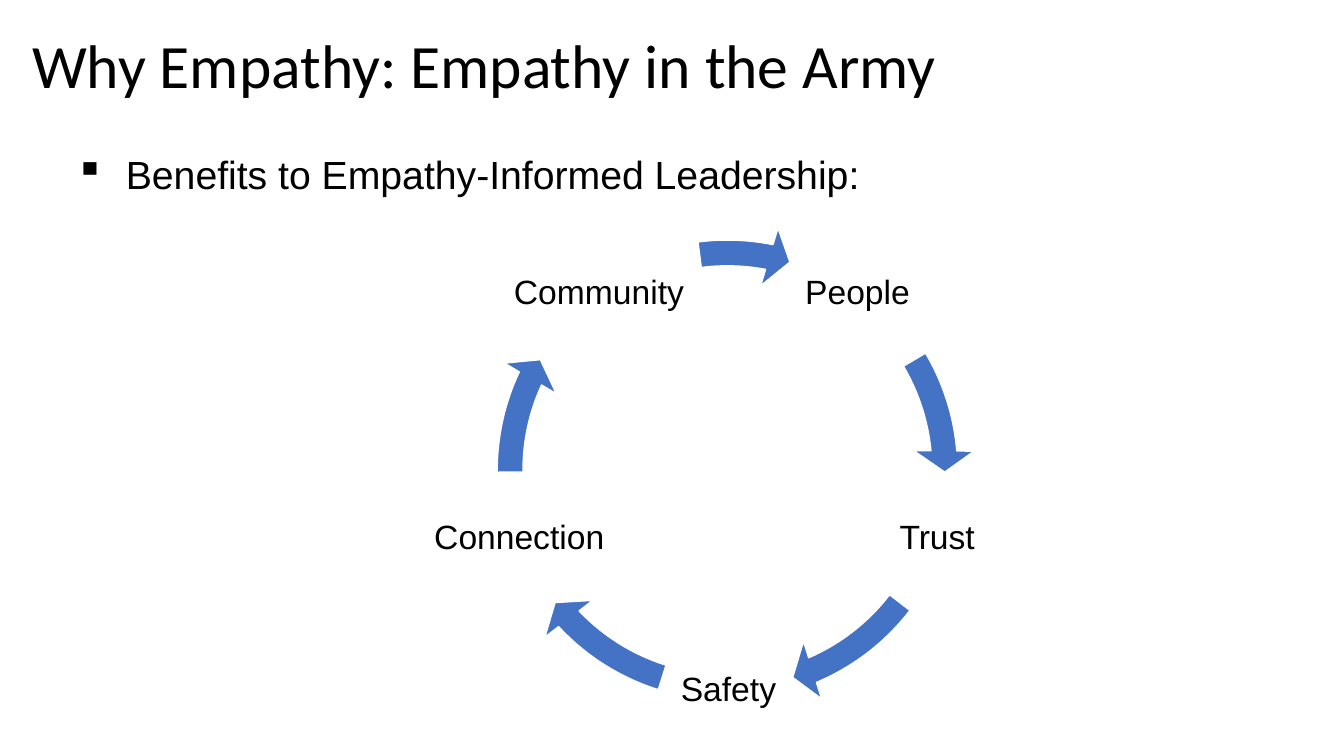
import math
from dataclasses import dataclass

import lxml.etree
import pptx
import pptx.dml.color
import pptx.enum.shapes
import pptx.enum.text
import pptx.oxml.ns
import pptx.util

PX = 9144


@dataclass(frozen=True)
class Theme:
    ink: str = "000000"
    paper: str = "FFFFFF"
    accent: str = "4472C4"
    heading_font: str = "Calibri"
    body_font: str = "Arial"
    title_size: int = 44
    bullet_size: int = 28
    node_size: int = 24


def color(code):
    return pptx.dml.color.RGBColor.from_string(code)


class SlideBuilder:
    def __init__(self, page, theme):
        self.page = page
        self.theme = theme

    def add_text(self, frame, text, font, size, spacing, align):
        frame.word_wrap = True
        frame.vertical_anchor = pptx.enum.text.MSO_ANCHOR.MIDDLE
        para = frame.paragraphs[0]
        para.alignment = align
        para.line_spacing = spacing
        span = para.add_run()
        span.text = text
        span.font.name = font
        span.font.size = pptx.util.Pt(size)
        span.font.color.rgb = color(self.theme.ink)
        return para

    def title(self, text, *bounds):
        box = self.page.shapes.add_shape(
            pptx.enum.shapes.MSO_SHAPE.RECTANGLE, *(value * PX for value in bounds))
        box.shadow.inherit = False
        box.fill.solid()
        box.fill.fore_color.rgb = color(self.theme.paper)
        box.line.fill.background()
        self.add_text(box.text_frame, text, self.theme.heading_font,
                      self.theme.title_size, 0.9, pptx.enum.text.PP_ALIGN.LEFT)

    def bullet(self, text, *bounds):
        box = self.page.shapes.add_textbox(*(value * PX for value in bounds))
        para = self.add_text(box.text_frame, text, self.theme.body_font,
                             self.theme.bullet_size, 1.07, pptx.enum.text.PP_ALIGN.LEFT)
        box.text_frame.auto_size = pptx.enum.text.MSO_AUTO_SIZE.SHAPE_TO_FIT_TEXT
        para.level = 1
        properties = para._p.get_or_add_pPr()
        properties.set("marL", str(56 * PX))
        properties.set("indent", str(-50 * PX))
        mark = lxml.etree.SubElement(properties, pptx.oxml.ns.qn("a:buChar"))
        mark.set("char", "▪")

    def node(self, group, text, center_x, center_y, width, height):
        box = group.shapes.add_textbox(
            (center_x - width // 2) * PX, (center_y - height // 2) * PX,
            width * PX, height * PX)
        frame = box.text_frame
        frame.margin_left = frame.margin_right = 3 * PX
        frame.margin_top = frame.margin_bottom = 3 * PX
        self.add_text(frame, text, self.theme.body_font,
                      self.theme.node_size, 0.9, pptx.enum.text.PP_ALIGN.CENTER)

    def arc_arrow(self, group, left, top, size, start, end):
        arrow = group.shapes.add_shape(
            pptx.enum.shapes.MSO_SHAPE.CIRCULAR_ARROW,
            left * PX, top * PX, size * PX, size * PX)
        arrow.shadow.inherit = False
        arrow.fill.solid()
        arrow.fill.fore_color.rgb = color(self.theme.accent)
        arrow.line.color.rgb = color(self.theme.paper)
        arrow.line.width = pptx.util.Pt(1)
        thickness, head_angle, head_width = 5.2 / 100, 5.6, 6.1 / 100
        settings = (thickness, head_angle * 0.6, end * 0.6, start * 0.6, head_width)
        for index, value in enumerate(settings):
            arrow.adjustments[index] = value


def main():
    deck = pptx.Presentation()
    deck.slide_width = 1333 * PX
    deck.slide_height = 750 * PX
    page = deck.slides.add_slide(deck.slide_layouts[6])
    builder = SlideBuilder(page, Theme())

    builder.bullet("Benefits to Empathy-Informed Leadership:", 59, 142, 1216, 57)
    builder.title("Why Empathy: Empathy in the Army", 22, 18, 1150, 99)

    cycle = page.shapes.add_group_shape()
    ring_left, ring_top, ring_size = 476, 221, 491
    center_x, center_y, radius = 722, 467, 218
    steps = [
        ("People", 131, 329.42, 354.9),
        ("Trust", 131, 37.54, 66.93),
        ("Safety", 131, 107.48, 136.86),
        ("Connection", 180, 179.5, 204.98),
        ("Community", 200, 262.66, 281.11),
    ]
    for index, (label, width, start, end) in enumerate(steps):
        angle = math.radians(-54 + index * 360 / len(steps))
        builder.node(cycle, label,
                     round(center_x + radius * math.cos(angle)),
                     round(center_y + radius * math.sin(angle)), width, 131)
        builder.arc_arrow(cycle, ring_left, ring_top, ring_size, start, end)

    deck.save("out.pptx")


if __name__ == "__main__":
    main()
